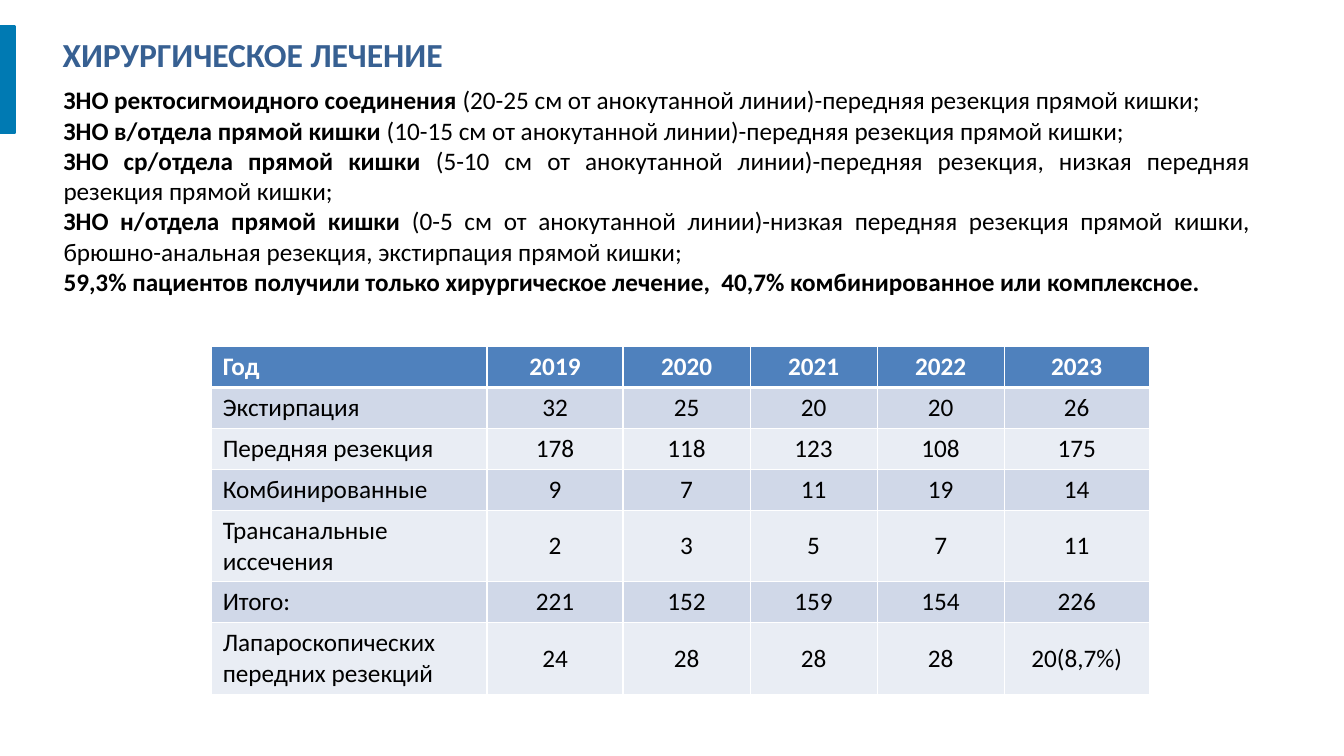
from dataclasses import dataclass

from lxml import etree
from pptx import Presentation
from pptx import util as u
from pptx.dml.color import RGBColor
from pptx.enum import shapes, text
from pptx.oxml import ns


@dataclass(frozen=True)
class Theme:
    font: str = "Calibri"
    title_size: int = 24
    text_size: int = 18
    title: str = "376092"
    accent: str = "007AB3"
    ink: str = "000000"
    white: str = "FFFFFF"
    header: str = "4F81BD"
    bands: tuple = ("D0D8E8", "E9EDF4")


THEME = Theme()

TITLE = "ХИРУРГИЧЕСКОЕ ЛЕЧЕНИЕ"
INDICATIONS = [
    ("ЗНО ректосигмоидного соединения",
     " (20-25 см от анокутанной линии)-передняя резекция прямой кишки; "),
    ("ЗНО в/отдела прямой кишки",
     " (10-15 см от анокутанной линии)-передняя резекция прямой кишки;"),
    ("ЗНО ср/отдела прямой кишки",
     " (5-10 см от анокутанной линии)-передняя резекция, низкая передняя "
     "резекция прямой кишки;"),
    ("ЗНО н/отдела прямой кишки",
     " (0-5 см от анокутанной линии)-низкая передняя резекция прямой кишки, "
     "брюшно-анальная резекция, экстирпация прямой кишки;"),
    ("59,3% пациентов получили только хирургическое лечение,  "
     "40,7% комбинированное или комплексное. ", ""),
]
OPERATIONS = [
    ("Год", 2019, 2020, 2021, 2022, 2023),
    ("Экстирпация", 32, 25, 20, 20, 26),
    ("Передняя резекция", 178, 118, 123, 108, 175),
    ("Комбинированные", 9, 7, 11, 19, 14),
    ("Трансанальные иссечения", 2, 3, 5, 7, 11),
    ("Итого:", 221, 152, 159, 154, 226),
    ("Лапароскопических передних резекций", 24, 28, 28, 28, "20(8,7%)"),
]
COLUMN_WIDTHS = (2.73, 1.35, 1.26, 1.26, 1.26, 1.44)
ROW_HEIGHTS = (0.4, 0.4, 0.4, 0.4, 0.7, 0.4, 0.7)


def rgb(value):
    return RGBColor.from_string(value)


def place(shape, box):
    shape.left, shape.top, shape.width, shape.height = map(u.Inches, box)


def set_font(font, size, color, bold=False):
    font.name = THEME.font
    font.size = u.Pt(size)
    font.bold = bold
    font.color.rgb = rgb(color)


def prepare_frame(frame):
    frame.word_wrap = True
    frame.auto_size = text.MSO_AUTO_SIZE.NONE
    frame.vertical_anchor = text.MSO_ANCHOR.TOP


def remove_bullet(para):
    properties = para._p.get_or_add_pPr()
    properties.set("marL", "0")
    properties.set("indent", "0")
    etree.SubElement(properties, ns.qn("a:buNone"))


def add_border(cell, side, width):
    line = etree.SubElement(cell._tc.get_or_add_tcPr(), ns.qn(f"a:ln{side}"),
                            w=str(u.Pt(width)))
    fill = etree.SubElement(line, ns.qn("a:solidFill"))
    etree.SubElement(fill, ns.qn("a:srgbClr"), val=THEME.white)


def add_accent(page, box):
    bar = page.shapes.add_shape(shapes.MSO_SHAPE.RECTANGLE, *map(u.Inches, box))
    bar.shadow.inherit = False
    bar.fill.solid()
    bar.fill.fore_color.rgb = rgb(THEME.accent)
    bar.line.color.rgb = rgb(THEME.accent)
    bar.line.width = u.Pt(2)


def fill_title(page, box):
    title = page.shapes.title
    place(title, box)
    prepare_frame(title.text_frame)
    para = title.text_frame.paragraphs[0]
    para.text = TITLE
    para.alignment = text.PP_ALIGN.LEFT
    set_font(para.font, THEME.title_size, THEME.title, bold=True)


def fill_indications(page, box):
    body = page.placeholders[1]
    place(body, box)
    frame = body.text_frame
    prepare_frame(frame)
    for index, (lead, detail) in enumerate(INDICATIONS):
        para = frame.add_paragraph() if index else frame.paragraphs[0]
        para.alignment = text.PP_ALIGN.JUSTIFY
        para.space_before = u.Pt(0)
        remove_bullet(para)
        set_font(para.font, THEME.text_size, THEME.ink)
        for words, bold in ((lead, True), (detail, False)):
            if words:
                span = para.add_run()
                span.text = words
                span.font.bold = bold


def fill_cell(cell, value, is_header, is_label, band):
    cell.margin_left = cell.margin_right = u.Inches(0.11)
    cell.margin_top = cell.margin_bottom = u.Inches(0.05)
    for side in "LRTB":
        add_border(cell, side, 3 if is_header and side == "B" else 1)
    cell.fill.solid()
    cell.fill.fore_color.rgb = rgb(THEME.header if is_header else band)
    para = cell.text_frame.paragraphs[0]
    para.text = str(value)
    set_font(para.font, THEME.text_size,
             THEME.white if is_header else THEME.ink, bold=is_header)
    if not is_label:
        cell.vertical_anchor = text.MSO_ANCHOR.MIDDLE
        para.alignment = text.PP_ALIGN.CENTER


def add_operations(page, left, top):
    box = (left, top, sum(COLUMN_WIDTHS), sum(ROW_HEIGHTS))
    table = page.shapes.add_table(len(ROW_HEIGHTS), len(COLUMN_WIDTHS),
                                  *map(u.Inches, box)).table
    for column, width in zip(table.columns, COLUMN_WIDTHS):
        column.width = u.Inches(width)
    for r, (height, values) in enumerate(zip(ROW_HEIGHTS, OPERATIONS)):
        table.rows[r].height = u.Inches(height)
        for c, value in enumerate(values):
            fill_cell(table.cell(r, c), value, r == 0, c == 0,
                      THEME.bands[(r - 1) % 2])


def main():
    deck = Presentation()
    deck.slide_width, deck.slide_height = u.Inches(13.33), u.Inches(7.5)
    page = deck.slides.add_slide(deck.slide_layouts[1])
    add_operations(page, 2.1, 3.44)
    fill_title(page, (0.52, 0.29, 6.66, 0.5))
    add_accent(page, (0, 0.26, 0.15, 1.06))
    fill_indications(page, (0.53, 0.79, 11.97, 2.22))
    deck.save("out.pptx")


if __name__ == "__main__":
    main()
